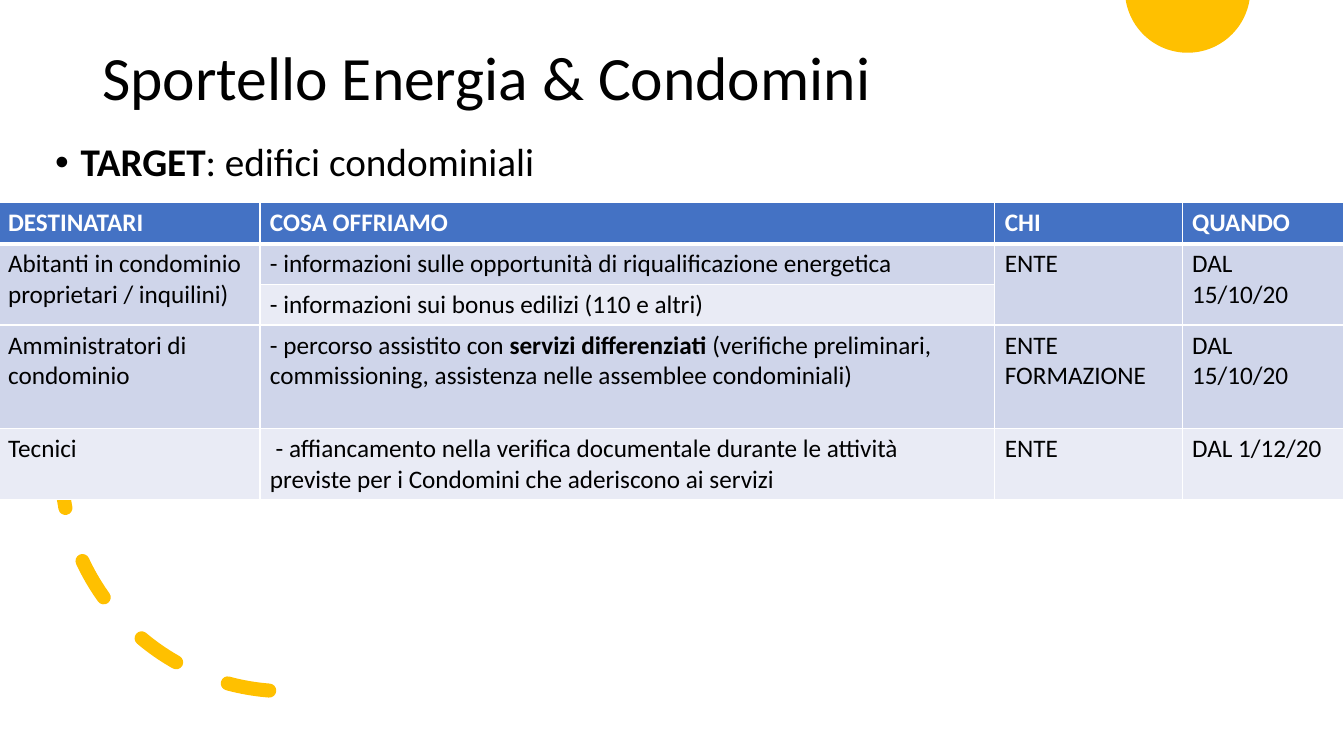
"""Build the slide on the energy help desk for condominiums."""
import math

import pptx
import pptx.dml.color
import pptx.enum.dml
import pptx.enum.shapes
import pptx.enum.text
import pptx.oxml
import pptx.oxml.ns
import pptx.util

Cm, Pt = pptx.util.Cm, pptx.util.Pt
qn = pptx.oxml.ns.qn
NS = pptx.oxml.ns.nsdecls("a")
YELLOW, BLUE, DARK_BAND, LIGHT_BAND = "FFC000", "4472C4", "CFD5EA", "E9EBF5"


def rgb(value):
    return pptx.dml.color.RGBColor.from_string(value)


def write(tf, text, size=18, color="000000", bold=False, spacing=None):
    """Fill a text frame; newlines split paragraphs, asterisks toggle bold."""
    tf.word_wrap = True
    for i, line in enumerate(text.split("\n")):
        p = tf.paragraphs[0] if i == 0 else tf.add_paragraph()
        p.line_spacing = spacing
        for j, part in enumerate(line.split("*")):
            if part:
                r = p.add_run()
                r.text = part
                r.font.name = "Calibri"
                r.font.size = Pt(size)
                r.font.bold = bold or j % 2 == 1
                r.font.color.rgb = rgb(color)


prs = pptx.Presentation()
prs.slide_width, prs.slide_height = Cm(33.87), Cm(19.05)
s = prs.slides.add_slide(prs.slide_layouts[6])

cx, cy, radius, steps = 29.93, -0.25, 1.58, 60
start = math.asin(-cy / radius)
angles = [start + (math.pi - 2 * start) * i / steps for i in range(steps + 1)]
points = [(Cm(cx + radius * math.cos(a)), Cm(cy + radius * math.sin(a))) for a in angles]
fb = s.shapes.build_freeform(*points[0])
fb.add_line_segments(points[1:], close=True)
sun = fb.convert_to_shape()
sun.shadow.inherit = False
sun.fill.solid()
sun.fill.fore_color.rgb = rgb(YELLOW)
sun.line.fill.background()

title = s.shapes.add_textbox(Cm(2.33), Cm(0.18), Cm(29.21), Cm(3.68))
title.text_frame.vertical_anchor = pptx.enum.text.MSO_ANCHOR.MIDDLE
write(title.text_frame, "Sportello Energia & Condomini", size=44, spacing=0.9)

arc = s.shapes.add_shape(pptx.enum.shapes.MSO_SHAPE.ARC, Cm(1.55), Cm(6.07), Cm(11.35), Cm(11.35))
arc.shadow.inherit = False
arc.rotation = 90
arc.element.spPr.find(qn("a:xfrm")).set("flipV", "1")
arc.fill.background()
arc.line.color.rgb = rgb(YELLOW)
arc.line.width = Pt(10)
arc.line.dash_style = pptx.enum.dml.MSO_LINE.DASH
arc.element.spPr.find(qn("a:ln")).set("cap", "rnd")

widths = [6.6, 18.52, 4.72, 4.06]
heights = [1.03, 1.03, 1.02, 2.6, 1.8]
rows = [
    ["DESTINATARI", "COSA OFFRIAMO", "CHI", "QUANDO"],
    ["Abitanti in condominio proprietari / inquilini)",
     "- informazioni sulle opportunità di riqualificazione energetica", "ENTE", "DAL 15/10/20"],
    ["", "- informazioni sui bonus edilizi (110 e altri)", "", ""],
    ["Amministratori di condominio",
     "- percorso assistito con *servizi differenziati *(verifiche preliminari, "
     "commissioning, assistenza nelle assemblee condominiali)",
     "ENTE\nFORMAZIONE", "DAL 15/10/20"],
    ["Tecnici",
     " - affiancamento nella verifica documentale durante le attività "
     "previste per i Condomini che aderiscono ai servizi", "ENTE", "DAL 1/12/20"],
]
fills = [BLUE, DARK_BAND, LIGHT_BAND, DARK_BAND, LIGHT_BAND]

table = s.shapes.add_table(len(rows), len(widths), Cm(-0.05), Cm(5.11),
                           Cm(sum(widths)), Cm(sum(heights))).table
for column, width in zip(table.columns, widths):
    column.width = Cm(width)
for row, height in zip(table.rows, heights):
    row.height = Cm(height)
for c in (0, 2, 3):
    table.cell(1, c).merge(table.cell(2, c))

for r, texts in enumerate(rows):
    for c, text in enumerate(texts):
        cell = table.cell(r, c)
        tcPr = cell._tc.get_or_add_tcPr()
        for side in "LRTB":
            thick = (r, side) in ((0, "B"), (1, "T"))
            tcPr.append(pptx.oxml.parse_xml(
                f'<a:ln{side} {NS} w="{Pt(3 if thick else 1)}"><a:solidFill>'
                f'<a:srgbClr val="FFFFFF"/></a:solidFill></a:ln{side}>'))
        cell.fill.solid()
        cell.fill.fore_color.rgb = rgb(DARK_BAND if cell.is_spanned else fills[r])
        if text:
            write(cell.text_frame, text, color="FFFFFF" if r == 0 else "000000", bold=r == 0)

target = s.shapes.add_textbox(Cm(1.14), Cm(3.48), Cm(29.21), Cm(1.45))
write(target.text_frame, "*TARGET*: edifici condominiali", size=28, spacing=0.9)
p = target.text_frame.paragraphs[0]
p.space_before = Pt(10)
pPr = p._p.get_or_add_pPr()
pPr.set("marL", str(Cm(0.64)))
pPr.set("indent", str(Cm(-0.64)))
pPr.append(pptx.oxml.parse_xml(f'<a:buFont {NS} typeface="Arial"/>'))
pPr.append(pptx.oxml.parse_xml(f'<a:buChar {NS} char="•"/>'))

prs.save("out.pptx")
